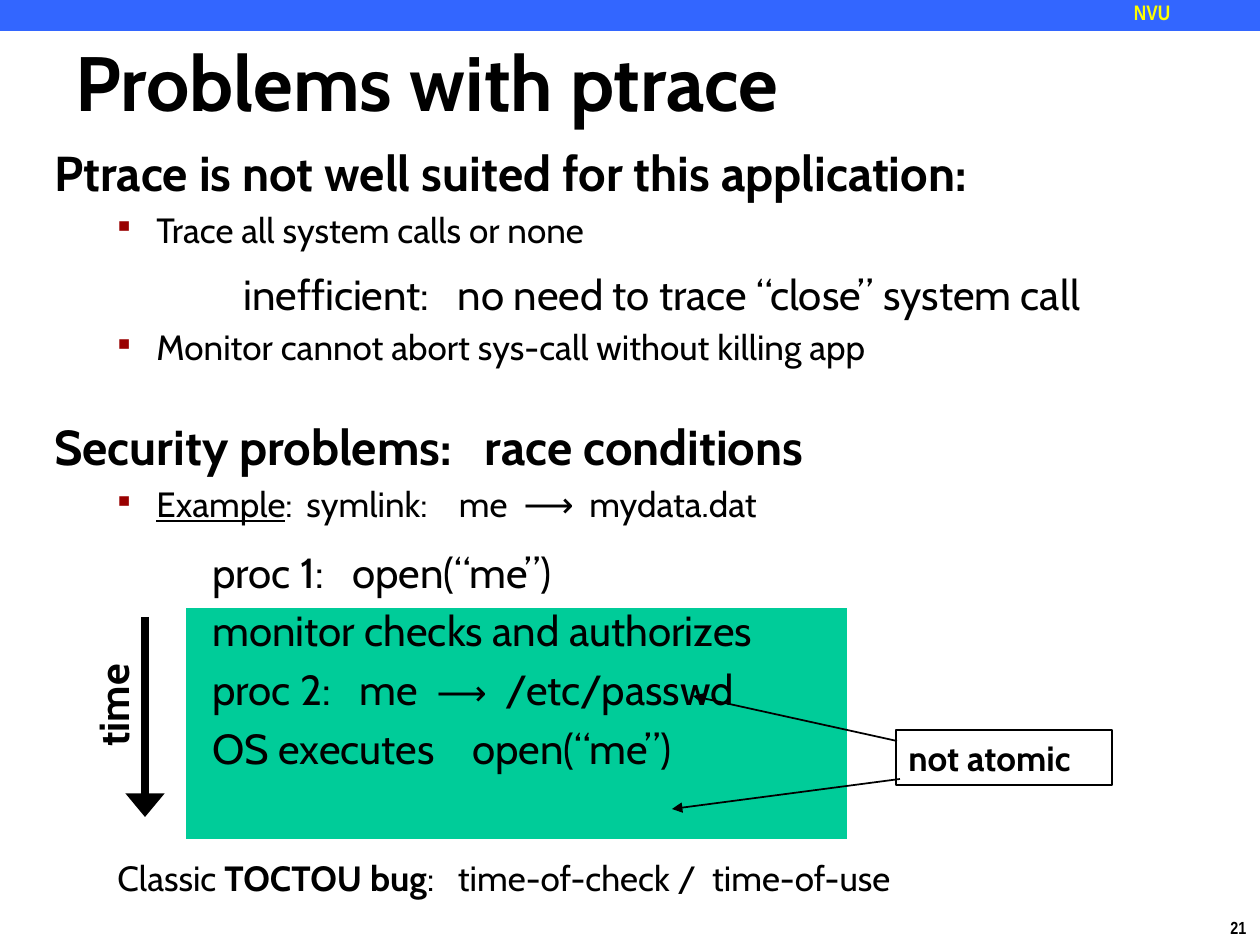
from lxml.etree import SubElement
from pptx import Presentation
from pptx.dml.color import RGBColor
from pptx.enum.shapes import MSO_CONNECTOR as CONN, MSO_SHAPE as SHAPE
from pptx.enum.text import MSO_ANCHOR as ANCHOR, MSO_AUTO_SIZE as AUTO, PP_ALIGN as ALIGN
from pptx.oxml.ns import qn
from pptx.util import Emu, Pt

SCALE = 914400 / 126


def px(n):
    return Emu(round(n * SCALE))


def color(value):
    return RGBColor.from_string(value)


class Deck:
    font = "Cabin"
    small_font = "Arial Narrow"
    ink = "000000"

    def __init__(self, width, height):
        self.prs = Presentation()
        self.prs.slide_width, self.prs.slide_height = px(width), px(height)
        self.slide = self.prs.slides.add_slide(self.prs.slide_layouts[5])
        self.shapes = self.slide.shapes

    def run(self, p, text, ink=None, font=None, **fmt):
        r = p.add_run()
        r.text = text
        r.font.name = font or self.font
        r.font.color.rgb = color(ink or self.ink)
        for name, value in fmt.items():
            setattr(r.font, name, value)

    def frame(self, sp, **fmt):
        tf = sp.text_frame
        for name, value in {"auto_size": AUTO.NONE, "word_wrap": True, **fmt}.items():
            setattr(tf, name, value)
        return tf

    def title(self, box, text, size):
        sp = self.shapes.title
        sp.left, sp.top, sp.width, sp.height = map(px, box)
        p = self.frame(sp, vertical_anchor=ANCHOR.MIDDLE).paragraphs[0]
        p.alignment = ALIGN.LEFT
        self.run(p, text, size=Pt(size), bold=True)

    def label(self, box, text, size, rotation=0, ink=None, font=None, outline=None, **fmt):
        sp = self.shapes.add_textbox(*map(px, box))
        sp.rotation = rotation
        if outline:
            sp.line.color.rgb = color(outline)
            sp.line.width = Pt(1)
        tf = self.frame(sp, **{"word_wrap": False, **fmt})
        self.run(tf.paragraphs[0], text, ink, font, size=Pt(size), bold=True)

    def rect(self, box, fill):
        sp = self.shapes.add_shape(SHAPE.RECTANGLE, *map(px, box))
        sp.shadow.inherit = False
        sp.fill.solid()
        sp.fill.fore_color.rgb = color(fill)
        sp.line.fill.background()

    def arrow(self, start, end, width, head="med"):
        s = self.shapes.add_connector(CONN.STRAIGHT, *map(px, start + end))
        s.line.color.rgb = color(self.ink)
        s.line.width = Pt(width)
        SubElement(s.line._get_or_add_ln(), qn("a:tailEnd"), type="triangle", w=head)
        SubElement(s._element.spPr, qn("a:effectLst"))

    def paragraph(self, p, runs, size, level=0, left=0, hang=0, before=20,
                  before_pt=None, spacing=None, bullet=None, bold=False):
        p.level = level
        p.line_spacing = spacing
        pPr = p._p.get_or_add_pPr()
        pPr.set("marL", str(px(left)))
        pPr.set("indent", str(px(-hang)))
        if before_pt:
            p.space_before = Pt(before_pt)
        else:
            gap = SubElement(pPr, qn("a:spcBef"))
            SubElement(gap, qn("a:spcPct"), val=str(before * 1000))
        if bullet:
            SubElement(SubElement(pPr, qn("a:buClr")), qn("a:srgbClr"), val=bullet)
            SubElement(pPr, qn("a:buSzPct"), val="110000")
            SubElement(pPr, qn("a:buFont"), typeface=self.small_font)
            SubElement(pPr, qn("a:buChar"), char="▪")
        for text, fmt in runs:
            self.run(p, text, **{"size": Pt(size), "bold": bold, **fmt})

    def body(self, box, items):
        tf = self.frame(self.shapes.add_textbox(*map(px, box)))
        for i, (style, runs, extra) in enumerate(items):
            p = tf.add_paragraph() if i else tf.paragraphs[0]
            if isinstance(runs, str):
                runs = [(runs, {})]
            self.paragraph(p, runs, **{**style, **extra})


HEADING = dict(size=28, bold=True)
POINT = dict(size=20, level=1, left=102, hang=39, bullet="990000")
DETAIL = dict(size=24, level=3, left=189, spacing=1.2)
STEP = dict(size=24, level=2, left=158, hang=32)
CLOSING = dict(size=20, level=1, left=63, before_pt=48)

BODY = [
    (HEADING, "Ptrace is not well suited for this application:", {}),
    (POINT, "Trace all system calls or none", {}),
    (DETAIL, "inefficient:   no need to trace “close” system call", {}),
    (POINT, "Monitor cannot abort sys-call without killing app", {}),
    (HEADING, "Security problems:   race conditions", {"before": 100}),
    (POINT, [("Example", {"underline": True}), (":\tsymlink:    me  ⟶  mydata.dat", {})], {}),
    (STEP, "\tproc 1:   open(“me”)", {"before_pt": 12.2}),
    (STEP, "\tmonitor checks and authorizes", {}),
    (STEP, [("\tproc 2:   me  ", {}), ("⟶", {"size": Pt(20)}), ("  /etc/passwd", {})], {}),
    (STEP, "\tOS executes    open(“me”)", {}),
    (CLOSING, [("Classic ", {}), ("TOCTOU bug", {"bold": True}),
               (":   time-of-check /  time-of-use", {})], {}),
]


def main():
    deck = Deck(1260, 945)
    flush = dict.fromkeys(("margin_left", "margin_top", "margin_right", "margin_bottom"), 0)
    deck.label((1218, 911, 42, 34), "21", 10, font=deck.small_font)
    deck.rect((0, 0, 1260, 31), "3366FF")
    deck.label((1134, 0, 126, 28), "NVU", 12, ink="FFFF00", font=deck.small_font, **flush)
    deck.rect((186, 608, 661, 231), "00CC99")
    deck.title((63, 2, 1134, 158), "Problems with ptrace", 44)
    deck.body((42, 136, 1155, 809), BODY)
    deck.arrow((145, 617), (145, 817), 4.5, head="lg")
    deck.label((52, 667, 121, 63), "time", 24, rotation=270)
    deck.arrow((897, 741), (693, 696), 1)
    deck.arrow((900, 779), (672, 809), 1)
    deck.label((896, 730, 216, 55), "not atomic", 20, outline=deck.ink)
    deck.prs.save("out.pptx")


if __name__ == "__main__":
    main()
